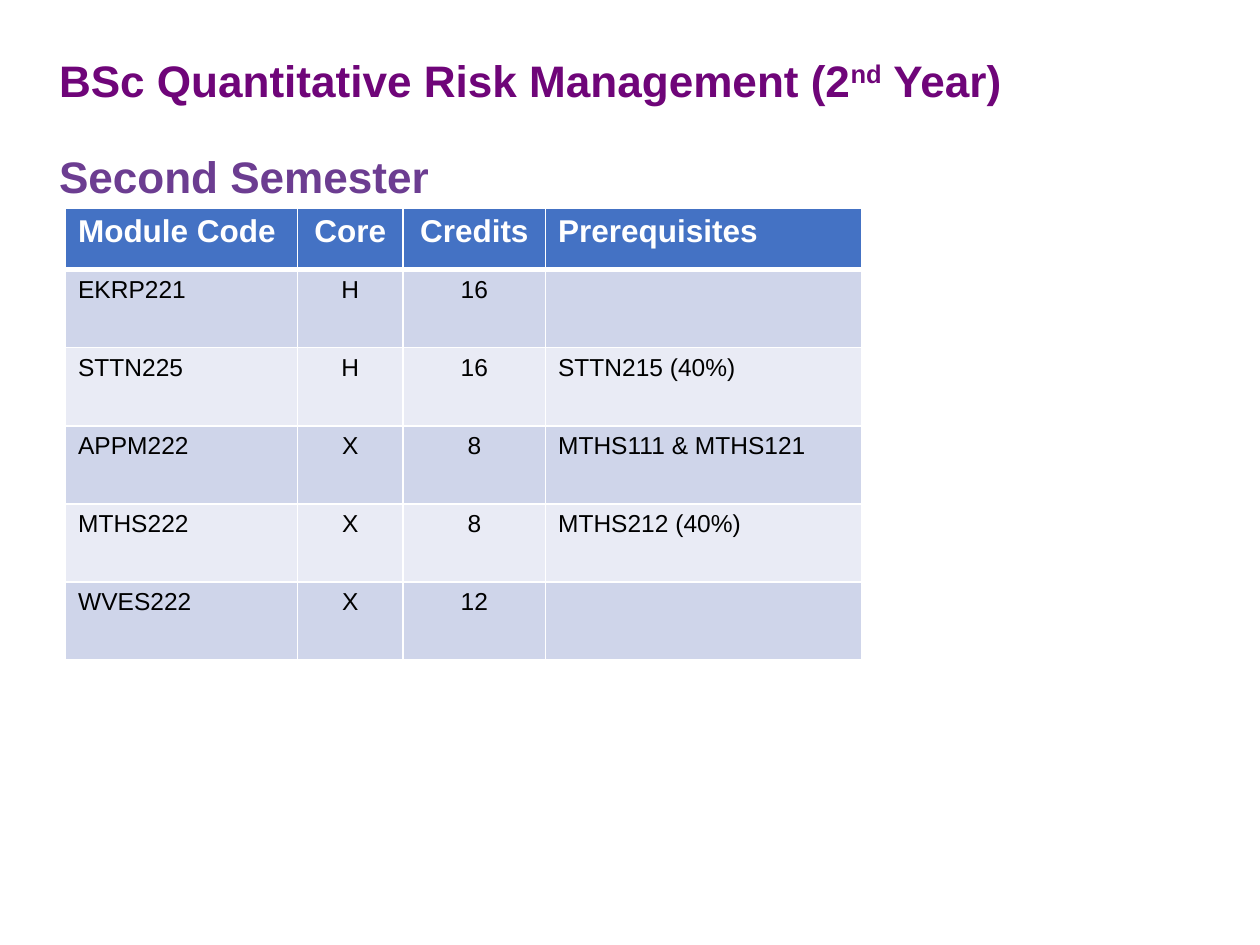
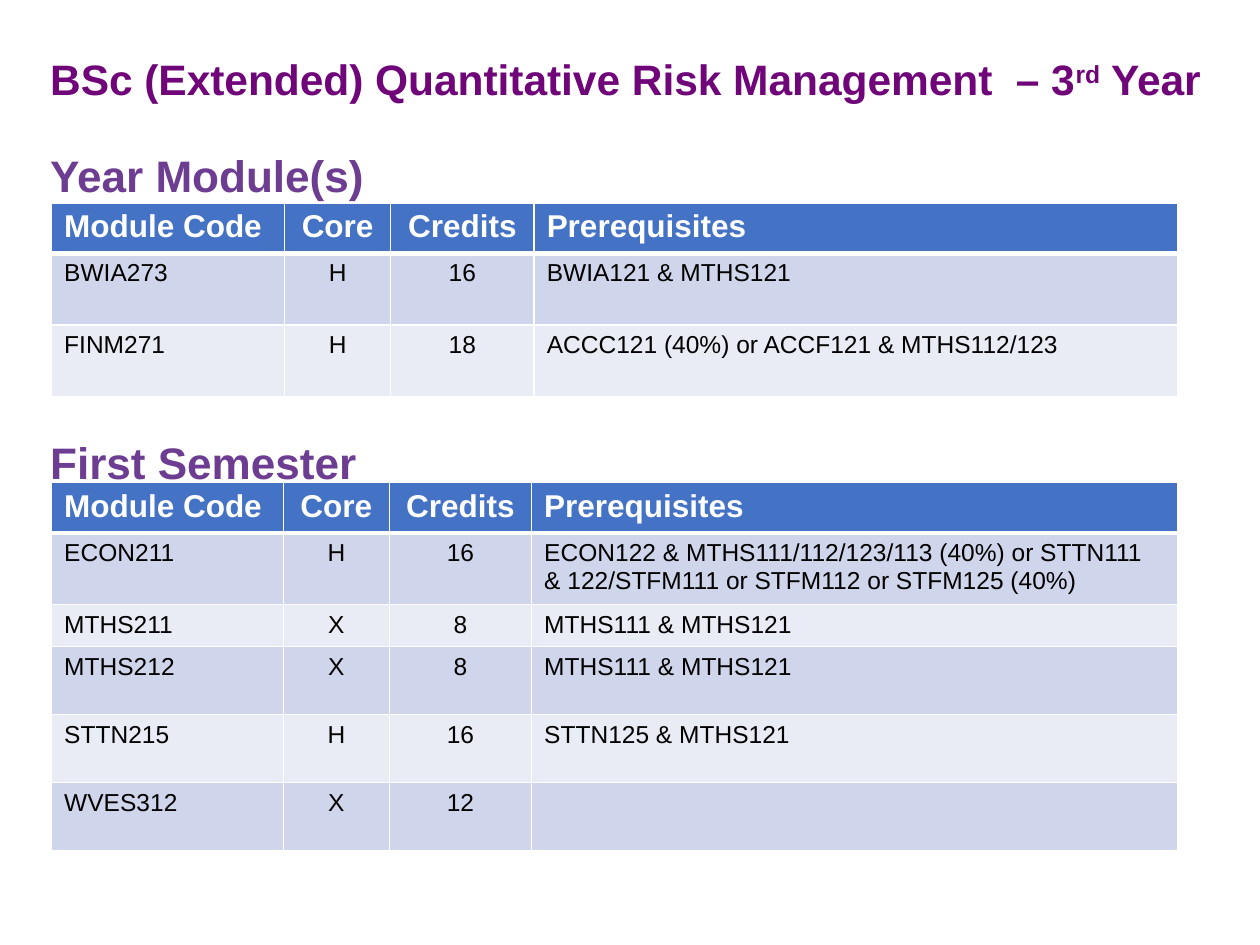
import pptx
import pptx.util
import pptx.dml.color
import pptx.enum.text
import pptx.oxml
import pptx.oxml.ns

FONT = "Arial"
WIDTH, HEIGHT = 10, 7.5
COLORS = {
    "title": "6F0579",
    "section": "6C3D91",
    "header": "4472C4",
    "odd": "CFD5EA",
    "even": "E9EBF5",
    "white": "FFFFFF",
    "body": "000000",
}
HEADINGS = ("Module Code", "Core", "Credits", "Prerequisites")
CENTERED = ("Core", "Credits")
SECTION_SIZE = 25.2

# Places and sizes are percentages of the slide's width and height.
SLIDES = [
    {
        "title": ("BSc Quantitative Risk Management (2", "nd", " Year)"),
        "title_size": 25.2,
        "title_box": (3.7, 5.33, 92.5, 7.33),
        "sections": [
            {
                "name": "Second Semester",
                "space_before": 28,
                "corner": (5.2, 22),
                "columns": (18.4, 8.4, 11.3, 25.1),
                "rows": (6.53, 8.27, 8.27, 8.27, 8.27, 8.27),
                "modules": [
                    ("EKRP221", "H", "16", ""),
                    ("STTN225", "H", "16", "STTN215 (40%)"),
                    ("APPM222", "X", "8", "MTHS111 & MTHS121"),
                    ("MTHS222", "X", "8", "MTHS212 (40%)"),
                    ("WVES222", "X", "12", ""),
                ],
            },
        ],
    },
    {
        "title": ("BSc (Extended) Quantitative Risk Management  – 3", "rd", " Year"),
        "title_size": 24.3,
        "title_box": (3, 5.33, 94.3, 8.27),
        "sections": [
            {
                "name": "Year Module(s)",
                "space_before": 28,
                "corner": (4.1, 21.47),
                "columns": (18.5, 8.4, 11.4, 51.1),
                "rows": (5.33, 7.6, 7.6),
                "modules": [
                    ("BWIA273", "H", "16", "BWIA121 & MTHS121"),
                    ("FINM271", "H", "18", "ACCC121 (40%) or ACCF121 & MTHS112/123"),
                ],
            },
            {
                "name": "First Semester",
                "space_before": 137,
                "corner": (4.1, 51.07),
                "columns": (18.4, 8.4, 11.3, 51.3),
                "rows": (5.2, 7.2, 4.4, 7.2, 7.2, 7.2),
                "modules": [
                    ("ECON211", "H", "16",
                     "ECON122 & MTHS111/112/123/113 (40%) or STTN111 & "
                     "122/STFM111 or STFM112 or STFM125 (40%)"),
                    ("MTHS211", "X", "8", "MTHS111 & MTHS121"),
                    ("MTHS212", "X", "8", "MTHS111 & MTHS121"),
                    ("STTN215", "H", "16", "STTN125 & MTHS121"),
                    ("WVES312", "X", "12", ""),
                ],
            },
        ],
    },
]


def across(percent):
    return pptx.util.Inches(WIDTH * percent / 100)


def down(percent):
    return pptx.util.Inches(HEIGHT * percent / 100)


def color(name):
    return pptx.dml.color.RGBColor.from_string(COLORS[name])


def write(paragraph, text, size, ink, bold=True, raised=False, centered=False):
    if centered:
        paragraph.alignment = pptx.enum.text.PP_ALIGN.CENTER
    if text:
        run = paragraph.add_run()
        run.text = text
        font = run.font
    else:
        font = paragraph.font
    font.name = FONT
    font.size = pptx.util.Pt(size)
    font.bold = bold
    font.color.rgb = color(ink)
    if raised:
        run._r.get_or_add_rPr().set("baseline", "30000")


def add_headings(slide, content):
    left, top, width, height = content["title_box"]
    box = slide.shapes.add_textbox(across(left), down(top), across(width), down(height))
    frame = box.text_frame
    frame.word_wrap = True
    frame.margin_top = pptx.util.Inches(0.07)
    title = frame.paragraphs[0]
    title.line_spacing = 0.9
    for index, part in enumerate(content["title"]):
        write(title, part, content["title_size"], "title", raised=index == 1)
    for section in content["sections"]:
        paragraph = frame.add_paragraph()
        paragraph.line_spacing = 0.9
        paragraph.space_before = pptx.util.Pt(section["space_before"])
        write(paragraph, section["name"], SECTION_SIZE, "section")


def add_borders(cell, top, bottom):
    properties = cell._tc.get_or_add_tcPr()
    for side, points in (("L", 1), ("R", 1), ("T", top), ("B", bottom)):
        properties.append(pptx.oxml.parse_xml(
            f'<a:ln{side} {pptx.oxml.ns.nsdecls("a")} w="{pptx.util.Pt(points)}">'
            f'<a:solidFill><a:srgbClr val="{COLORS["white"]}"/></a:solidFill></a:ln{side}>'))


def add_module_table(slide, section):
    rows, columns = section["rows"], section["columns"]
    left, top = section["corner"]
    table = slide.shapes.add_table(
        len(rows), len(columns), across(left), down(top),
        across(sum(columns)), down(sum(rows))).table
    for column, width in zip(table.columns, columns):
        column.width = across(width)
    for row, height in zip(table.rows, rows):
        row.height = down(height)
    for row_index, values in enumerate([HEADINGS, *section["modules"]]):
        is_header = row_index == 0
        fill = "header" if is_header else ("even", "odd")[row_index % 2]
        for column_index, value in enumerate(values):
            cell = table.cell(row_index, column_index)
            add_borders(cell, 3 if row_index == 1 else 1, 3 if is_header else 1)
            cell.fill.solid()
            cell.fill.fore_color.rgb = color(fill)
            write(cell.text_frame.paragraphs[0], value,
                  size=18 if is_header else 14,
                  ink="white" if is_header else "body",
                  bold=is_header,
                  centered=HEADINGS[column_index] in CENTERED)


def main():
    presentation = pptx.Presentation()
    presentation.slide_width = pptx.util.Inches(WIDTH)
    presentation.slide_height = pptx.util.Inches(HEIGHT)
    for content in SLIDES:
        slide = presentation.slides.add_slide(presentation.slide_layouts[6])
        add_headings(slide, content)
        for section in content["sections"]:
            add_module_table(slide, section)
    presentation.save("out.pptx")


if __name__ == "__main__":
    main()
